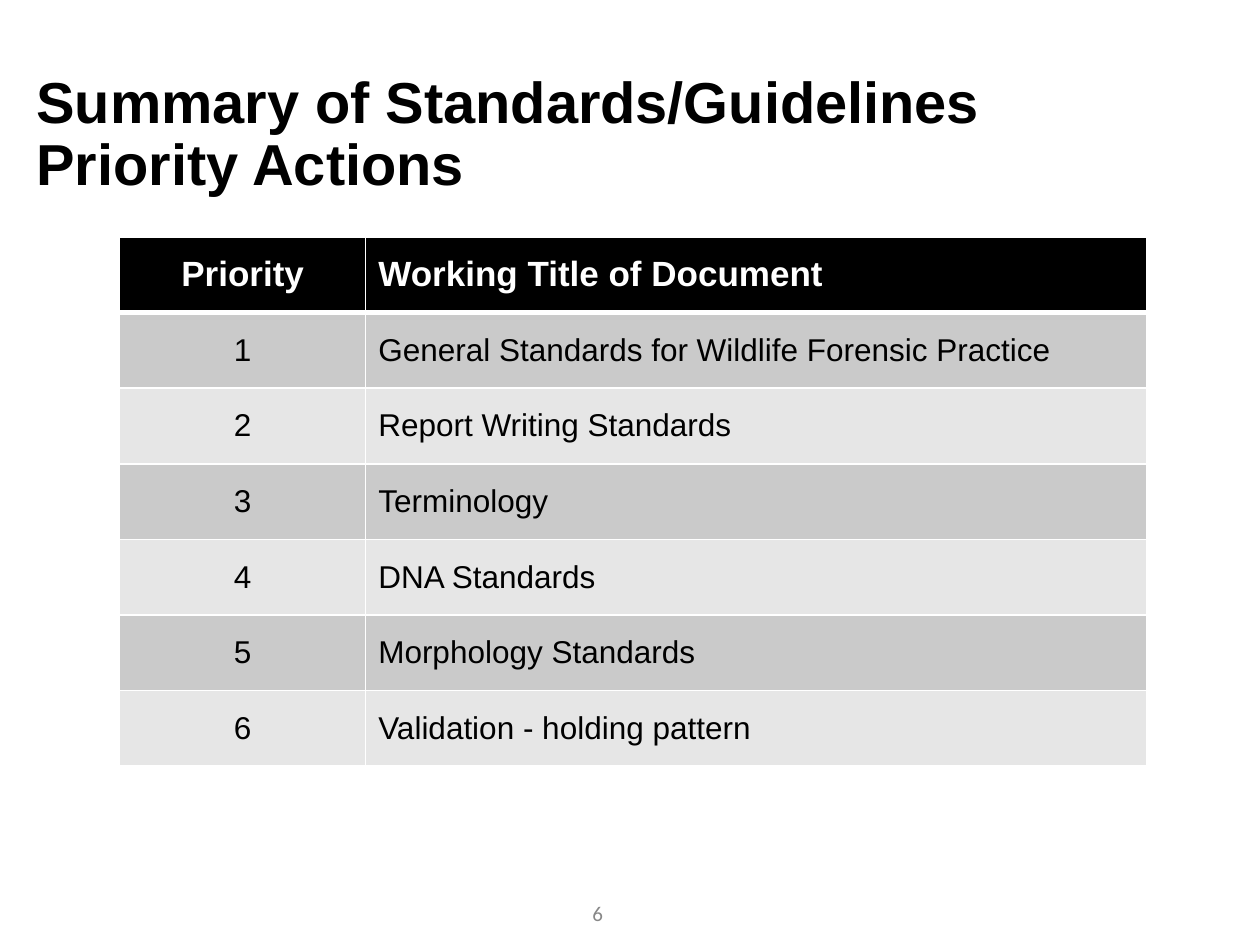
from lxml import etree
from pptx import Presentation
from pptx import util as u
from pptx.dml.color import RGBColor
from pptx.enum import text
from pptx.oxml.ns import qn


def color(value):
    return RGBColor.from_string(value)


def write(tf, content, font, size, fill, bold=False, align=text.PP_ALIGN.LEFT):
    tf.word_wrap = True
    p = tf.paragraphs[0]
    p.alignment = align
    r = p.add_run()
    r.text = content
    r.font.name = font
    r.font.size = u.Pt(size)
    r.font.bold = bold
    r.font.color.rgb = color(fill)
    return p


prs = Presentation()
prs.slide_width, prs.slide_height = u.Pt(720), u.Pt(540)
s = prs.slides.add_slide(prs.slide_layouts[6])

title = s.shapes.add_textbox(u.Pt(13.7), u.Pt(25.2), u.Pt(620.6), u.Pt(104.4))
title.text_frame.vertical_anchor = text.MSO_ANCHOR.MIDDLE
p = write(title.text_frame, "Summary of Standards/Guidelines Priority Actions",
          "Arial", 33, "000000", True)
p.line_spacing = 0.9

documents = [
    "General Standards for Wildlife Forensic Practice",
    "Report Writing Standards",
    "Terminology",
    "DNA Standards",
    "Morphology Standards",
    "Validation - holding pattern",
]
rows = [("Priority", "Working Title of Document")]
rows += [(str(n), name) for n, name in enumerate(documents, 1)]

table = s.shapes.add_table(len(rows), 2, u.Pt(68.4), u.Pt(135.4),
                           u.Pt(587), u.Pt(302.4)).table
table.columns[0].width = u.Pt(140.6)
table.columns[1].width = u.Pt(446.4)

for i, row in enumerate(rows):
    table.rows[i].height = u.Pt(43.2)
    header = i == 0
    fill = "000000" if header else ("E6E6E6", "CACACA")[i % 2]
    for j, content in enumerate(row):
        cell = table.cell(i, j)
        cell.vertical_anchor = text.MSO_ANCHOR.MIDDLE
        tcPr = cell._tc.get_or_add_tcPr()
        for side in "LRTB":
            thick = (header and side == "B") or (i == 1 and side == "T")
            ln = etree.SubElement(tcPr, qn(f"a:ln{side}"), w=str(u.Pt(3 if thick else 1)))
            solid = etree.SubElement(ln, qn("a:solidFill"))
            etree.SubElement(solid, qn("a:srgbClr"), val="FFFFFF")
        cell.fill.solid()
        cell.fill.fore_color.rgb = color(fill)
        write(cell.text_frame, content, "Arial", 20 if header else 18,
              "FFFFFF" if header else "000000", header,
              text.PP_ALIGN.LEFT if j else text.PP_ALIGN.CENTER)

number = s.shapes.add_textbox(u.Pt(260.6), u.Pt(507.6), u.Pt(162), u.Pt(28.8))
number.text_frame.vertical_anchor = text.MSO_ANCHOR.MIDDLE
write(number.text_frame, "6", "Calibri", 12, "888888", align=text.PP_ALIGN.CENTER)

prs.save("out.pptx")
